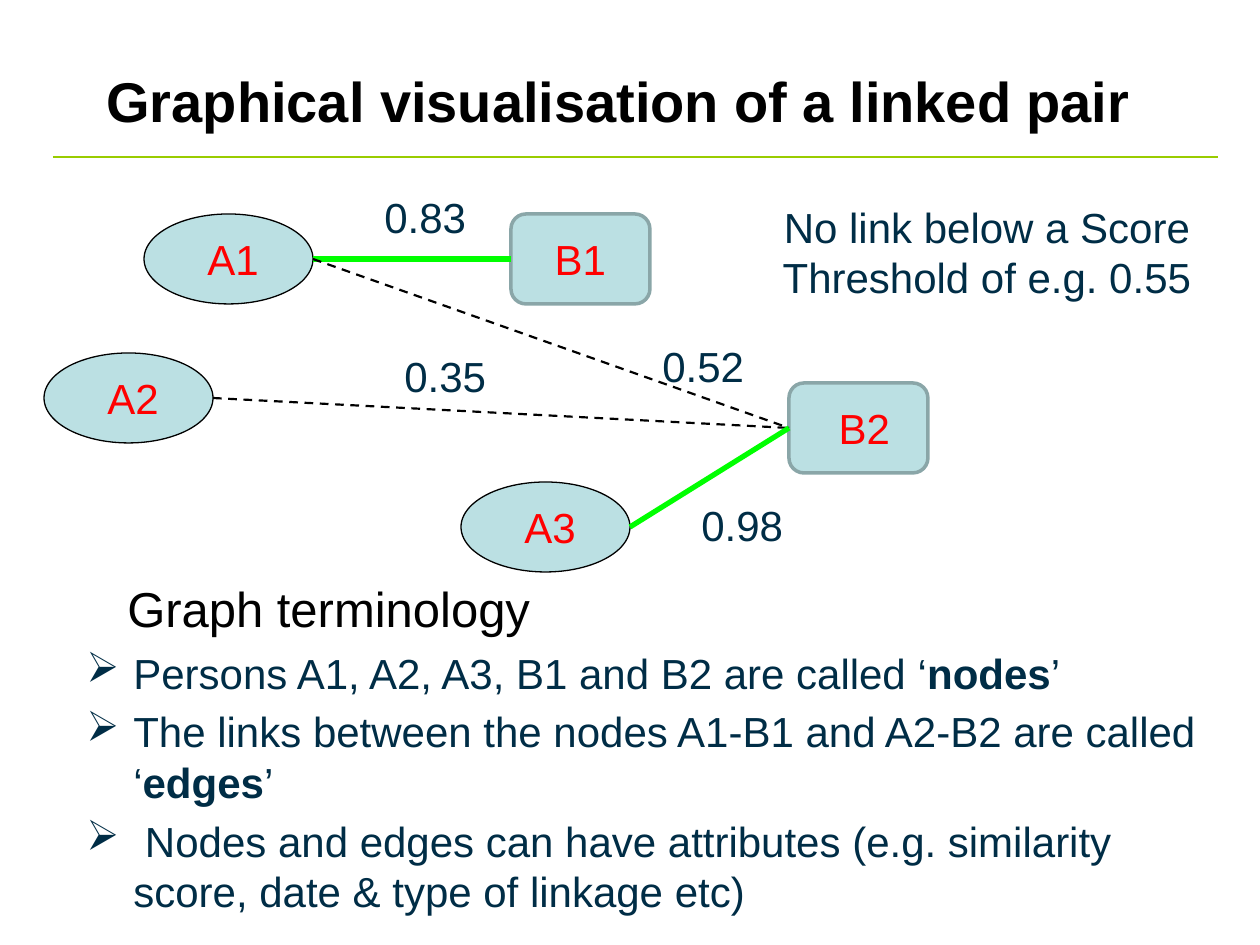
from dataclasses import dataclass

from lxml.etree import SubElement
from pptx import Presentation
from pptx.dml.color import RGBColor
from pptx.enum.dml import MSO_LINE_DASH_STYLE as Dash
from pptx.enum.shapes import MSO_CONNECTOR as Link, MSO_SHAPE as Kind
from pptx.enum.text import MSO_ANCHOR as Anchor, PP_ALIGN as Align
from pptx.oxml.ns import qn
from pptx.util import Emu, Pt

SCALE = 914400 / 126
FONT = "Arial"
NAVY, BLACK, RED, GREEN = "002D46", "000000", "FF0000", "00FF00"
SCORE_W, SCORE_H = 118, 63
INDENT = 47


@dataclass
class Look:
    kind: Kind
    width: int
    height: int
    line: str
    weight: float


@dataclass
class Node:
    text: str
    left: int
    top: int
    look: Look

    @property
    def right(self) -> int:
        return self.left + self.look.width

    @property
    def mid(self) -> int:
        return self.top + self.look.height // 2


@dataclass
class Edge:
    start: str
    end: str
    score: str
    left: int
    top: int
    linked: bool


OVAL = Look(Kind.OVAL, 169, 90, BLACK, 0.75)
BOX = Look(Kind.FLOWCHART_ALTERNATE_PROCESS, 139, 90, "8AA6A8", 2)

NODES = {
    "A1": Node(" A1", 144, 214, OVAL),
    "A2": Node(" A2", 44, 353, OVAL),
    "A3": Node(" A3", 461, 482, OVAL),
    "B1": Node("B1", 511, 214, BOX),
    "B2": Node(" B2", 789, 383, BOX),
}
EDGES = [
    Edge("A1", "B1", "0.83", 372, 185, True),
    Edge("A1", "B2", "0.52", 650, 334, False),
    Edge("A2", "B2", "0.35", 392, 344, False),
    Edge("A3", "B2", "0.98", 689, 493, True),
]
# Each point: opening words, term in bold, closing words
POINTS = [
    ("Persons A1, A2, A3, B1 and B2 are called ‘", "nodes", "’"),
    ("The links between the nodes A1-B1 and A2-B2 are called ‘", "edges", "’"),
    (" Nodes and edges can have attributes (e.g. similarity score, "
     "date & type of linkage etc)",),
]


def px(n: int) -> Emu:
    return Emu(round(n * SCALE))


def rgb(code: str) -> RGBColor:
    return RGBColor.from_string(code)


def style(run, size: int, color: str, bold: bool = False) -> None:
    font = run.font
    font.name, font.size, font.bold = FONT, Pt(size), bold
    font.color.rgb = rgb(color)


def frame(slide, left: int, top: int, width: int, height: int):
    """Add a wrapping text box and return its text frame."""
    box = slide.shapes.add_textbox(px(left), px(top), px(width), px(height))
    box.text_frame.word_wrap = True
    return box.text_frame


def label(slide, text: str, left: int, top: int, width: int, height: int,
          size: int = 24, color: str = NAVY, bold: bool = False,
          align: Align = Align.LEFT, anchor: Anchor = Anchor.TOP) -> None:
    body = frame(slide, left, top, width, height)
    body.text, body.vertical_anchor = text, anchor
    para = body.paragraphs[0]
    para.alignment = align
    style(para.runs[0], size, color, bold)


def line(slide, x1: int, y1: int, x2: int, y2: int,
         color: str, weight: float, dashed: bool = False) -> None:
    item = slide.shapes.add_connector(
        Link.STRAIGHT, px(x1), px(y1), px(x2), px(y2))
    item.line.color.rgb = rgb(color)
    item.line.width = Pt(weight)
    if dashed:
        item.line.dash_style = Dash.DASH
    SubElement(item._element.spPr, qn("a:effectLst"))


def draw_node(slide, node: Node) -> None:
    look = node.look
    item = slide.shapes.add_shape(look.kind, px(node.left), px(node.top),
                                  px(look.width), px(look.height))
    item.shadow.inherit = False
    item.fill.solid()
    item.fill.fore_color.rgb = rgb("BBE0E3")
    item.line.color.rgb = rgb(look.line)
    item.line.width = Pt(look.weight)
    body = item.text_frame
    body.text, body.vertical_anchor = node.text, Anchor.MIDDLE
    para = body.paragraphs[0]
    para.alignment = Align.CENTER
    style(para.runs[0], 24, RED)


def draw_edge(slide, edge: Edge) -> None:
    """Join the right of one node to the left of the other, with its score."""
    start, end = NODES[edge.start], NODES[edge.end]
    color, weight = (GREEN, 3) if edge.linked else (BLACK, 1.25)
    line(slide, start.right, start.mid, end.left, end.mid,
         color, weight, not edge.linked)
    label(slide, edge.score, edge.left, edge.top, SCORE_W, SCORE_H)


def bullet(para) -> None:
    props = para._p.get_or_add_pPr()
    props.set("marL", str(px(INDENT)))
    props.set("indent", str(-px(INDENT)))
    para.space_before = Pt(4.8)
    SubElement(props, qn("a:buChar")).set("char", "➢")


def draw_points(slide) -> None:
    body = frame(slide, 74, 641, 1144, 262)
    for i, parts in enumerate(POINTS):
        para = body.add_paragraph() if i else body.paragraphs[0]
        bullet(para)
        for j, part in enumerate(parts):
            run = para.add_run()
            run.text = part
            style(run, 24, NAVY, bold=j == 1)


def main() -> None:
    deck = Presentation()
    deck.slide_width, deck.slide_height = px(1260), px(945)
    slide = deck.slides.add_slide(deck.slide_layouts[6])
    line(slide, 53, 157, 1218, 157, "99CC00", 0.75)
    label(slide, "Graphical visualisation of a linked pair", 94, 21, 1071, 158,
          size=32, color=BLACK, bold=True, anchor=Anchor.MIDDLE)
    for node in NODES.values():
        draw_node(slide, node)
    for edge in EDGES:
        draw_edge(slide, edge)
    label(slide, "No link below a Score Threshold of e.g. 0.55",
          759, 195, 456, 115, align=Align.CENTER)
    label(slide, "Graph terminology", 115, 572, 645, 72, size=28, color=BLACK)
    draw_points(slide)
    deck.save("out.pptx")


if __name__ == "__main__":
    main()
